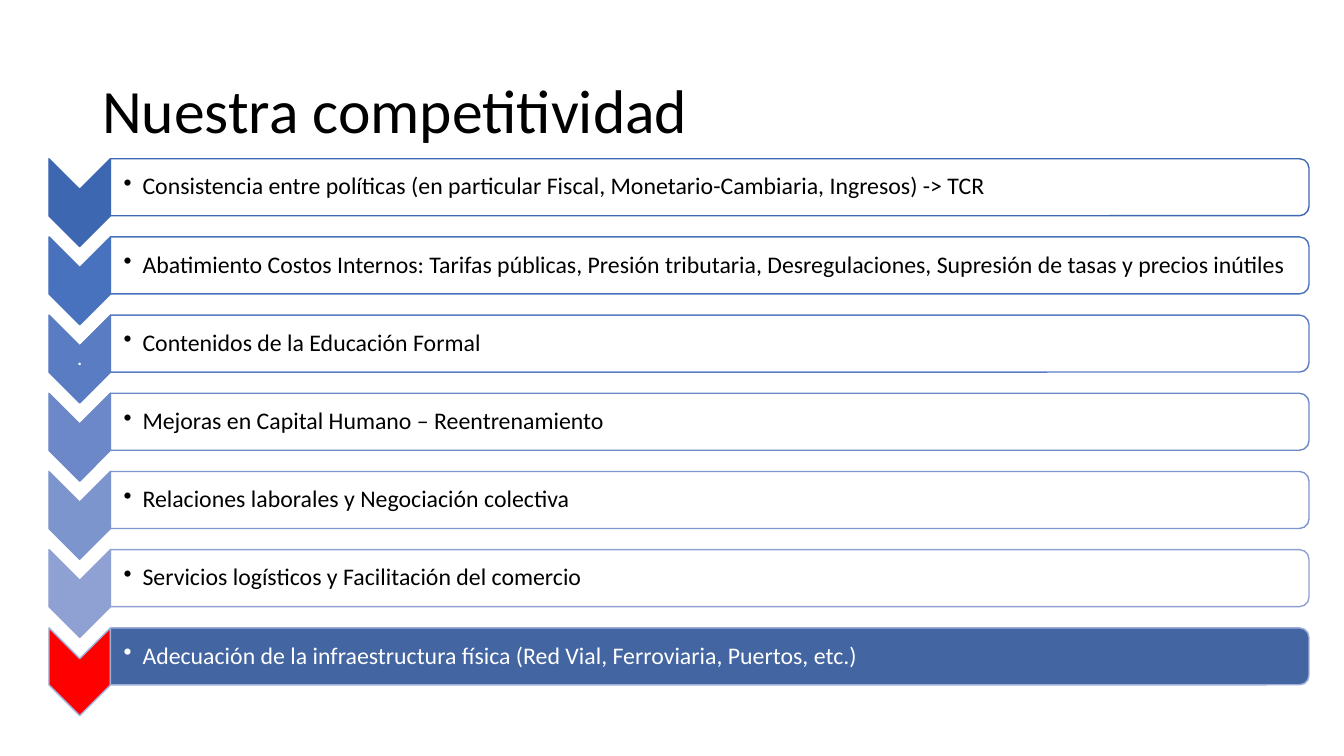
from lxml.etree import SubElement
from pptx import Presentation
from pptx.dml.color import RGBColor
from pptx.enum.shapes import MSO_SHAPE
from pptx.enum.text import MSO_ANCHOR, PP_ALIGN
from pptx.oxml.ns import qn
from pptx.util import Pt

FONT = "Calibri"
BLACK, WHITE = "000000", "FFFFFF"
RED, NAVY = "FF0000", "2F5597"
ROW_PITCH = 55.85
CHEVRON_WIDTH, CHEVRON_HEIGHT = 43.9, 62.7
BAR_HEIGHT = 40.7

# Topic, outline, chevron fill, bar fill, text colour, chevron label
TOPICS = [
    ("Consistencia entre políticas (en particular Fiscal, Monetario-Cambiaria, Ingresos) -> TCR",
     "3E67B2", "3E67B2", WHITE, BLACK, ""),
    ("Abatimiento Costos Internos: Tarifas públicas, Presión tributaria, Desregulaciones, "
     "Supresión de tasas y precios inútiles",
     "4871BE", "4871BE", WHITE, BLACK, ""),
    ("Contenidos de la Educación Formal", "5A7CC3", "5A7CC3", WHITE, BLACK, "."),
    ("Mejoras en Capital Humano – Reentrenamiento", "6C88C8", "6C88C8", WHITE, BLACK, ""),
    ("Relaciones laborales y Negociación colectiva", "7D95CD", "7D95CD", WHITE, BLACK, ""),
    ("Servicios logísticos y Facilitación del comercio", "8EA1D2", "8EA1D2", WHITE, BLACK, ""),
    ("Adecuación de la infraestructura física (Red Vial, Ferroviaria, Puertos, etc.)",
     "9FAED8", RED, NAVY, WHITE, ""),
]


def color(hex_code):
    return RGBColor.from_string(hex_code)


def add_text(slide, box, text, size, font_color, insets):
    """Add a one-paragraph, vertically centred text box and return the paragraph."""
    frame = slide.shapes.add_textbox(*map(Pt, box)).text_frame
    frame.word_wrap = True
    frame.vertical_anchor = MSO_ANCHOR.MIDDLE
    (frame.margin_left, frame.margin_top,
     frame.margin_right, frame.margin_bottom) = map(Pt, insets)
    frame.text = text
    paragraph = frame.paragraphs[0]
    paragraph.line_spacing = 0.9
    font = paragraph.runs[0].font
    font.name, font.size = FONT, Pt(size)
    font.color.rgb = color(font_color)
    return paragraph


def add_turned_shape(slide, preset, box, fill, outline):
    """Add a shape turned a quarter clockwise that covers the box as seen."""
    left, top, width, height = box
    shift = (width - height) / 2
    shape = slide.shapes.add_shape(
        preset, Pt(left + shift), Pt(top - shift), Pt(height), Pt(width))
    shape.rotation = 90
    shape.shadow.inherit = False
    shape.fill.solid()
    shape.fill.fore_color.rgb = color(fill)
    shape.line.color.rgb = color(outline)
    shape.line.width = Pt(1)
    return shape


def make_translucent(shape, percent):
    fill_color = shape.element.spPr.find(qn("a:solidFill"))[0]
    SubElement(fill_color, qn("a:alpha"), val=str(percent * 1000))


def add_bullet(paragraph, indent):
    properties = paragraph._p.get_or_add_pPr()
    properties.set("marL", str(Pt(indent)))
    properties.set("indent", str(-Pt(indent)))
    SubElement(properties, qn("a:buChar"), char="•")


def add_title(slide, box):
    add_text(slide, box, "Nuestra competitividad", 44, BLACK, (7.2, 3.6, 7.2, 3.6))


def add_topic_row(slide, box, topic):
    text, outline, chevron_fill, bar_fill, text_color, label = topic
    left, top, width, _ = box
    add_turned_shape(slide, MSO_SHAPE.CHEVRON,
                     (left, top, CHEVRON_WIDTH, CHEVRON_HEIGHT), chevron_fill, outline)
    if label:
        label_box = (left, top + CHEVRON_WIDTH / 2, CHEVRON_WIDTH,
                     CHEVRON_HEIGHT - CHEVRON_WIDTH)
        label_line = add_text(slide, label_box, label, 15, WHITE, (0.75,) * 4)
        label_line.alignment = PP_ALIGN.CENTER

    bar_box = (left + CHEVRON_WIDTH, top, width - CHEVRON_WIDTH, BAR_HEIGHT)
    bar = add_turned_shape(slide, MSO_SHAPE.ROUND_2_SAME_RECTANGLE,
                           bar_box, bar_fill, outline)
    make_translucent(bar, 90)
    topic_line = add_text(slide, bar_box, text, 17, text_color, (9.4, 0.75, 0.75, 0.75))
    add_bullet(topic_line, 13.5)


def add_topic_list(slide, box):
    left, top, width, _ = box
    for index, topic in enumerate(TOPICS):
        row_box = (left, top + index * ROW_PITCH, width, CHEVRON_HEIGHT)
        add_topic_row(slide, row_box, topic)


def main():
    presentation = Presentation()
    presentation.slide_width, presentation.slide_height = Pt(960), Pt(540)
    slide = presentation.slides.add_slide(presentation.slide_layouts[6])
    add_title(slide, (66, 28.75, 828, 104.4))
    add_topic_list(slide, (35, 113.4, 900, 398))
    presentation.save("out.pptx")


if __name__ == "__main__":
    main()
